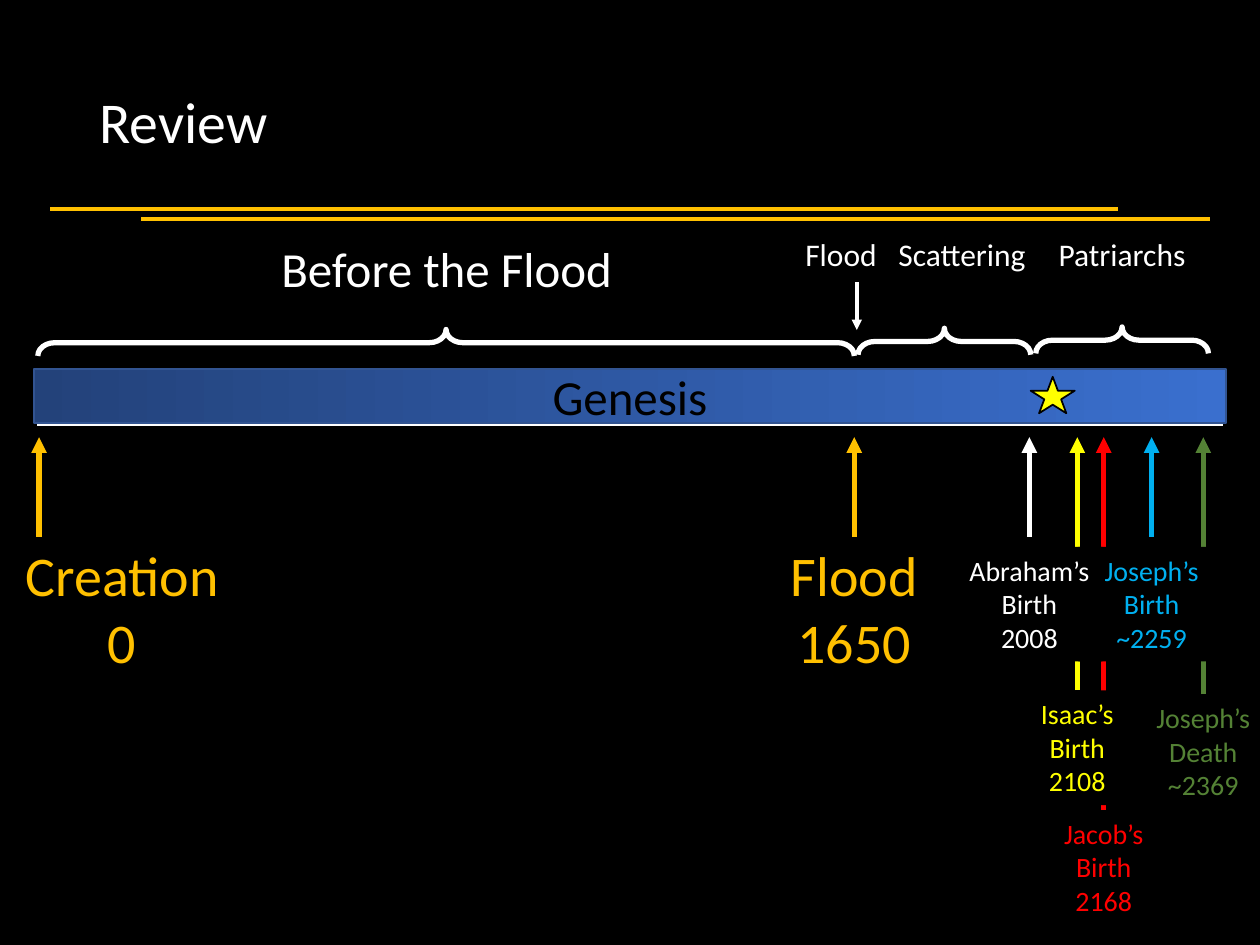
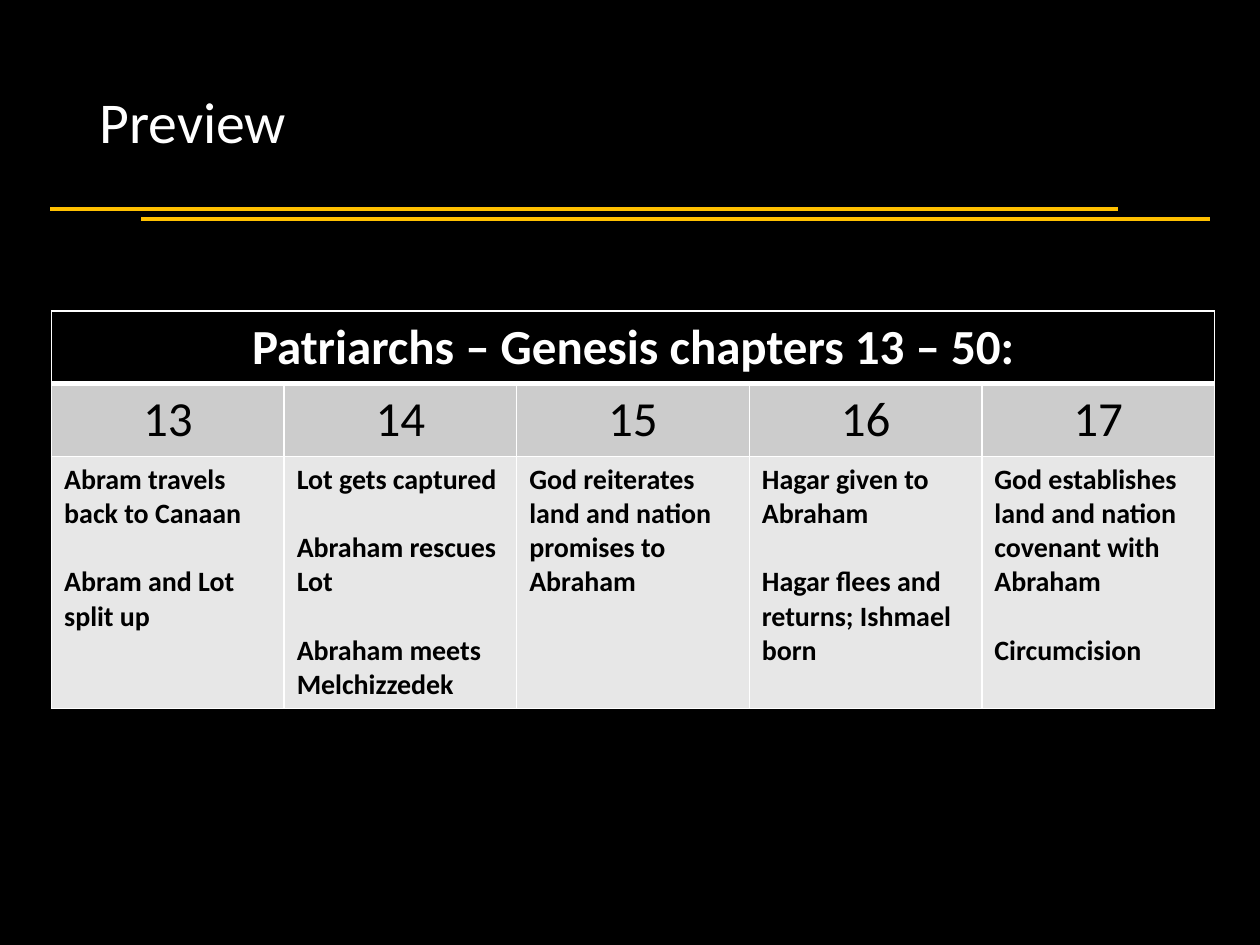
"""Build a review timeline and a preview table about Genesis."""
import lxml.etree
import pptx
import pptx.dml.color
import pptx.enum.shapes
import pptx.enum.text
import pptx.oxml.ns
import pptx.util

Inches = pptx.util.Inches
Pt = pptx.util.Pt
Shape = pptx.enum.shapes.MSO_SHAPE
Align = pptx.enum.text.PP_ALIGN
Anchor = pptx.enum.text.MSO_ANCHOR

WHITE, BLACK, GOLD = "FFFFFF", "000000", "FFC000"
YELLOW, RED, SKY, GREEN = "FFFF00", "FF0000", "00B0F0", "548235"
TABLE_BLUE, HEAD_GRAY, BODY_GRAY = "4472C4", "CCCCCC", "E7E7E7"
BAR_START, BAR_END, BAR_EDGE = "23427A", "3A6FCE", "325491"
FONT = "Calibri"


def color(value):
    return pptx.dml.color.RGBColor.from_string(value)


def child(parent, tag, **attributes):
    return lxml.etree.SubElement(parent, pptx.oxml.ns.qn(tag), attributes)


class SlideMaker:
    def __init__(self):
        self.deck = pptx.Presentation()
        self.deck.slide_width, self.deck.slide_height = Inches(10), Inches(7.5)
        background = self.deck.slide_master.background.fill
        background.solid()
        background.fore_color.rgb = color(BLACK)
        self.page = None

    def start_page(self, heading):
        self.page = self.deck.slides.add_slide(self.deck.slide_layouts[5])
        title = self.page.shapes.title
        title.left, title.top = Inches(0.69), Inches(0.4)
        title.width, title.height = Inches(8.62), Inches(1.18)
        title.text_frame.auto_size = pptx.enum.text.MSO_AUTO_SIZE.NONE
        title.text_frame.vertical_anchor = Anchor.MIDDLE
        self.paragraphs(title.text_frame, [heading], 33, WHITE, Align.LEFT)
        title.text_frame.paragraphs[0].line_spacing = 0.9
        self.line(0.4, 1.66, 8.87, 1.66, GOLD, 2.25)
        self.line(1.12, 1.74, 9.6, 1.74, GOLD, 2.25)

    def paragraphs(self, frame, lines, size, ink, align=Align.CENTER, bold=False, gap=0):
        for index, words in enumerate(lines):
            para = frame.add_paragraph() if index else frame.paragraphs[0]
            para.alignment = align
            para.space_before = Pt(gap if index else 0)
            span = para.add_run()
            span.text = words
            span.font.name, span.font.size, span.font.bold = FONT, Pt(size), bold
            span.font.color.rgb = color(ink)

    def text(self, left, top, width, height, lines, size, ink, fill=None):
        box = self.page.shapes.add_textbox(
            Inches(left), Inches(top), Inches(width), Inches(height))
        box.text_frame.word_wrap = True
        if fill:
            box.fill.solid()
            box.fill.fore_color.rgb = color(fill)
        self.paragraphs(box.text_frame, lines, size, ink)
        return box

    def line(self, left, top, right, bottom, ink, weight, arrow=False):
        connector = self.page.shapes.add_connector(
            pptx.enum.shapes.MSO_CONNECTOR.STRAIGHT,
            Inches(left), Inches(top), Inches(right), Inches(bottom))
        connector.line.color.rgb = color(ink)
        connector.line.width = Pt(weight)
        if arrow:
            child(connector.line._get_or_add_ln(), "a:tailEnd", type="triangle")
        child(connector._element.spPr, "a:effectLst")
        return connector

    def shape(self, kind, left, top, width, height, edge, weight, fill=None):
        figure = self.page.shapes.add_shape(
            kind, Inches(left), Inches(top), Inches(width), Inches(height))
        figure.shadow.inherit = False
        figure.line.color.rgb = color(edge)
        figure.line.width = Pt(weight)
        if fill:
            figure.fill.solid()
            figure.fill.fore_color.rgb = color(fill)
        else:
            figure.fill.background()
        return figure

    def brace(self, start, end, middle):
        depth, length = 0.21, end - start
        figure = self.shape(Shape.LEFT_BRACE, (start + end - depth) / 2,
                            middle - length / 2, depth, length, WHITE, 3)
        figure.rotation = 90
        figure.adjustments[0] = 0.634

    def bar(self, left, top, width, height, label):
        figure = self.shape(Shape.RECTANGLE, left, top, width, height, BAR_EDGE, 1)
        figure.fill.gradient()
        figure.fill.gradient_angle = 0
        for stop, ink in zip(figure.fill.gradient_stops, (BAR_START, BAR_END)):
            stop.color.rgb = color(ink)
        figure.text_frame.vertical_anchor = Anchor.MIDDLE
        self.paragraphs(figure.text_frame, [label], 28, BLACK)

    def table(self, left, top, width, row_heights, column_count):
        grid = self.page.shapes.add_table(
            len(row_heights), column_count, Inches(left), Inches(top),
            Inches(width), Inches(sum(row_heights))).table
        grid.first_row = grid.horz_banding = False
        for row, height in zip(grid.rows, row_heights):
            row.height = Inches(height)
        for column in grid.columns:
            column.width = Inches(width / column_count)
        return grid

    def cell(self, cell, fill, top=1, bottom=1):
        cell.fill.solid()
        cell.fill.fore_color.rgb = color(fill)
        properties = cell._tc.get_or_add_tcPr()
        sides = (("a:lnL", 1), ("a:lnR", 1), ("a:lnT", top), ("a:lnB", bottom))
        for index, (tag, weight) in enumerate(sides):
            border = child(properties, tag, w=str(Pt(weight)))
            child(child(border, "a:solidFill"), "a:srgbClr", val=WHITE)
            properties.insert(index, border)


def build_review(maker):
    maker.start_page("Review")
    grid = maker.table(0.3, 2.95, 9.41, [0.41], 24)
    for cell in grid.iter_cells():
        maker.cell(cell, TABLE_BLUE, bottom=3)

    for center, width, lines in ((0.97, 1.75, ["Creation", "0"]),
                                 (6.78, 1.33, ["Flood", "1650"])):
        maker.text(center - width / 2, 4.24, width, 1.18, lines, 32, GOLD)
    for arrow_x in (0.31, 6.78):
        maker.line(arrow_x, 4.26, arrow_x, 3.47, GOLD, 3, arrow=True)

    births_and_deaths = (
        (8.55, 5.48, ["Isaac’s Birth", "2108"], YELLOW, BLACK),
        (8.76, 6.43, ["Jacob’s Birth", "2168"], RED, None),
        (9.55, 5.51, ["Joseph’s Death", "~2369"], GREEN, None),
        (9.14, 4.34, ["Joseph’s Birth", "~2259"], SKY, BLACK),
        (8.17, 4.34, ["Abraham’s Birth", "2008"], WHITE, BLACK),
    )
    arrows = [maker.line(center, 4.26, center, 3.47, ink, 3, arrow=True)
              for center, top, lines, ink, fill in births_and_deaths]
    for arrow, (center, top, lines, ink, fill) in zip(arrows, births_and_deaths):
        box = maker.text(center - 0.58, top, 1.16, 0.91, lines, 16, ink, fill)
        if top > 5:
            arrow.begin_connect(box, 0)

    maker.bar(0.27, 2.93, 9.46, 0.43, "Genesis")
    maker.shape(Shape.STAR_5_POINT, 8.18, 2.99, 0.35, 0.29, BLACK, 1, YELLOW)
    for start, end, middle in ((0.3, 6.78, 2.72), (6.81, 8.18, 2.71), (8.22, 9.59, 2.7)):
        maker.brace(start, end, middle)
    maker.text(2.06, 1.84, 2.97, 0.57, ["Before the Flood"], 28, WHITE)
    for left, era in ((6.05, "Flood"), (7.01, "Scattering"), (8.28, "Patriarchs")):
        maker.text(left, 1.82, 1.25, 0.4, [era], 18, WHITE)
    maker.line(6.8, 2.24, 6.8, 2.62, WHITE, 2, arrow=True)


def build_preview(maker):
    chapters = {
        "13": ["Abram travels back to Canaan", "Abram and Lot split up"],
        "14": ["Lot gets captured", "Abraham rescues Lot", "Abraham meets Melchizzedek"],
        "15": ["God reiterates land and nation promises to Abraham"],
        "16": ["Hagar given to Abraham", "Hagar flees and returns; Ishmael born"],
        "17": ["God establishes land and nation covenant with Abraham", "Circumcision"],
    }
    maker.start_page("Preview")
    grid = maker.table(0.41, 2.47, 9.23, [0.57, 0.57, 2], len(chapters))
    for column, (chapter, events) in enumerate(chapters.items()):
        heading, number, summary = (grid.cell(row, column) for row in range(3))
        maker.cell(heading, BLACK, bottom=3)
        maker.cell(number, HEAD_GRAY, top=3)
        maker.cell(summary, BODY_GRAY)
        maker.paragraphs(number.text_frame, [chapter], 28, BLACK)
        maker.paragraphs(summary.text_frame, events, 16, BLACK, Align.LEFT,
                         bold=True, gap=19.5)
    banner = grid.cell(0, 0)
    banner.merge(grid.cell(0, len(chapters) - 1))
    maker.paragraphs(banner.text_frame, ["Patriarchs – Genesis chapters 13 – 50:"],
                     28, WHITE, bold=True)


def main():
    maker = SlideMaker()
    build_review(maker)
    build_preview(maker)
    maker.deck.save("out.pptx")


if __name__ == "__main__":
    main()
